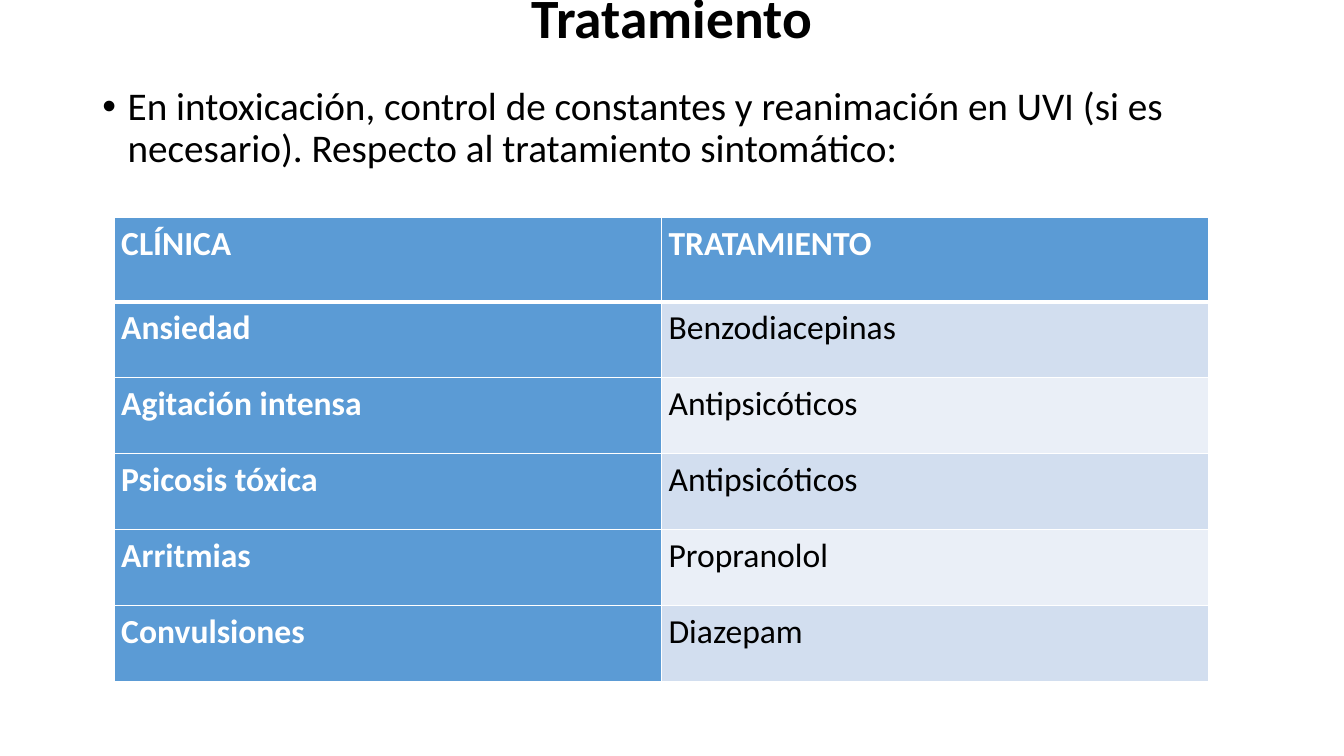
from dataclasses import dataclass

from lxml import etree
from pptx import Presentation
from pptx.dml.color import RGBColor
from pptx.enum import text
from pptx.oxml import ns
from pptx.util import Pt

TITLE = "Tratamiento\v"
INTRO = ("En intoxicación, control de constantes y reanimación en UVI "
         "(si es necesario). Respecto al tratamiento sintomático:")
TREATMENTS = [
    ("CLÍNICA", "TRATAMIENTO"),
    ("Ansiedad", "Benzodiacepinas"),
    ("Agitación intensa", "Antipsicóticos"),
    ("Psicosis tóxica", "Antipsicóticos"),
    ("Arritmias", "Propranolol"),
    ("Convulsiones", "Diazepam"),
]


@dataclass(frozen=True)
class Theme:
    font: str = "Calibri"
    title_size: float = 39.6
    body_size: float = 28
    table_size: float = 24
    dark: str = "000000"
    light: str = "FFFFFF"
    accent: str = "5B9BD5"
    bands: tuple = ("D2DEEF", "EAEFF7")


THEME = Theme()
SLIDE_SIZE = (960, 540)
TITLE_BOX = (66, 12.4, 828, 56.9)
BODY_BOX = (66, 58.3, 828, 427.7)
TABLE_LEFT, TABLE_TOP = 81.4, 155.5
COLUMN_WIDTH = 391
HEADER_HEIGHT, ROW_HEIGHT = 60.2, 54.2
CELL_INSET = 5.2
BULLET_INDENT = 18
THIN_LINE, THICK_LINE = 1, 3


def place(box, bounds):
    box.left, box.top, box.width, box.height = map(Pt, bounds)


def style(para, size, color, bold=False, spacing=0.9):
    para.line_spacing = spacing
    for span in para.runs:
        span.font.name = THEME.font
        span.font.size = Pt(size)
        span.font.bold = bold
        span.font.color.rgb = RGBColor.from_string(color)


def add_border(cell, side, width):
    line = etree.SubElement(cell._tc.get_or_add_tcPr(), ns.qn(f"a:ln{side}"), w=str(Pt(width)))
    fill = etree.SubElement(line, ns.qn("a:solidFill"))
    etree.SubElement(fill, ns.qn("a:srgbClr"), val=THEME.light)


def add_title(page):
    box = page.shapes.title
    place(box, TITLE_BOX)
    frame = box.text_frame
    frame.text = TITLE
    frame.auto_size = text.MSO_AUTO_SIZE.NONE
    frame.vertical_anchor = text.MSO_ANCHOR.MIDDLE
    para = frame.paragraphs[0]
    para.alignment = text.PP_ALIGN.CENTER
    style(para, THEME.title_size, THEME.dark, bold=True)


def add_intro(page):
    box = page.placeholders[1]
    place(box, BODY_BOX)
    frame = box.text_frame
    frame.text = INTRO
    frame.auto_size = text.MSO_AUTO_SIZE.NONE
    para = frame.paragraphs[0]
    para.space_before = Pt(10)
    style(para, THEME.body_size, THEME.dark)
    properties = para._p.get_or_add_pPr()
    properties.set("marL", str(Pt(BULLET_INDENT)))
    properties.set("indent", str(-Pt(BULLET_INDENT)))
    etree.SubElement(properties, ns.qn("a:buFont"), typeface="Arial")
    etree.SubElement(properties, ns.qn("a:buChar"), char="•")


def fill_cell(cell, words, row, column):
    heading = row == 0 or column == 0
    cell.text = words
    cell.margin_left = cell.margin_right = Pt(CELL_INSET)
    cell.margin_top = cell.margin_bottom = 0
    style(cell.text_frame.paragraphs[0], THEME.table_size,
          THEME.light if heading else THEME.dark, bold=heading, spacing=1.15)
    thick_sides = {0: "B", 1: "T"}
    for side in "LRTB":
        add_border(cell, side, THICK_LINE if thick_sides.get(row) == side else THIN_LINE)
    cell.fill.solid()
    color = THEME.accent if heading else THEME.bands[(row - 1) % 2]
    cell.fill.fore_color.rgb = RGBColor.from_string(color)


def add_treatments(page):
    rows, columns = len(TREATMENTS), len(TREATMENTS[0])
    height = HEADER_HEIGHT + ROW_HEIGHT * (rows - 1)
    table = page.shapes.add_table(rows, columns, Pt(TABLE_LEFT), Pt(TABLE_TOP),
                                  Pt(COLUMN_WIDTH * columns), Pt(height)).table
    table.first_col = True
    for row, entries in enumerate(TREATMENTS):
        table.rows[row].height = Pt(ROW_HEIGHT if row else HEADER_HEIGHT)
        for column, words in enumerate(entries):
            fill_cell(table.cell(row, column), words, row, column)


def main():
    deck = Presentation()
    deck.slide_width, deck.slide_height = map(Pt, SLIDE_SIZE)
    page = deck.slides.add_slide(deck.slide_layouts[1])
    add_title(page)
    add_intro(page)
    add_treatments(page)
    deck.save("out.pptx")


if __name__ == "__main__":
    main()
